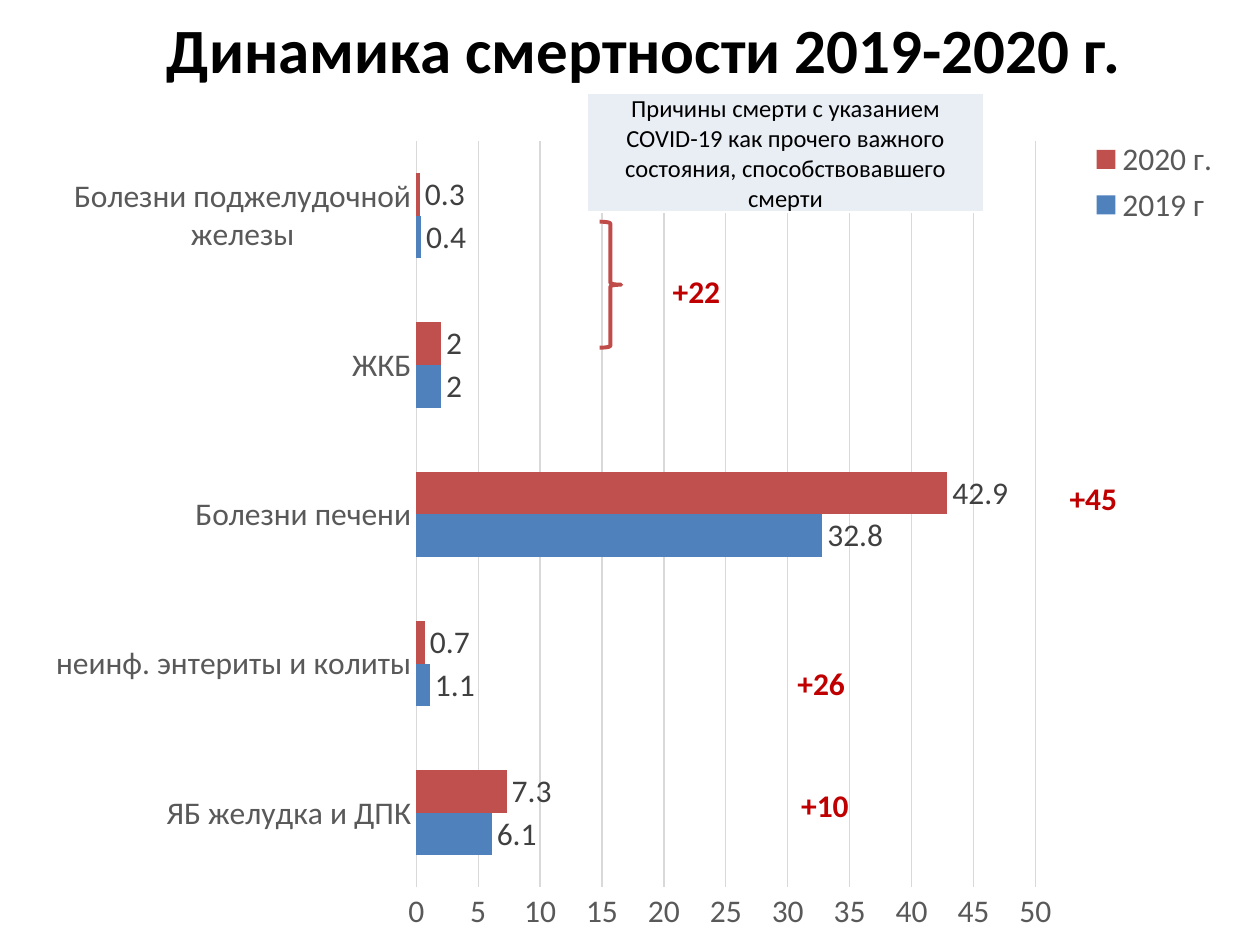
"""Build the mortality dynamics slide with a bar chart, a note and change marks."""
from dataclasses import dataclass

from lxml import etree
from pptx import Presentation
from pptx import util as u
from pptx.chart.data import CategoryChartData
from pptx.dml.color import RGBColor
from pptx.enum import chart as charts, shapes, text
from pptx.oxml import parse_xml
from pptx.oxml.ns import nsdecls, qn


@dataclass(frozen=True)
class Theme:
    font: str = "Calibri"
    title_size: int = 36
    body_size: int = 18
    note_size: int = 14
    ink: str = "000000"
    axis: str = "595959"
    label: str = "404040"
    grid: str = "D9D9D9"
    accent: str = "C00000"
    brace: str = "BF4C48"
    note_fill: str = "E9EDF4"
    border: str = "FFFFFF"
    series: tuple = ("4F81BD", "C0504D")


class SlideBuilder:
    COLUMNS, ROWS = 100, 75

    def __init__(self, deck, theme):
        self.theme = theme
        self.cell_width = deck.slide_width / self.COLUMNS
        self.cell_height = deck.slide_height / self.ROWS
        self.slide = deck.slides.add_slide(deck.slide_layouts[6])

    def place(self, left, top, width, height):
        return (u.Emu(round(left * self.cell_width)), u.Emu(round(top * self.cell_height)),
                u.Emu(round(width * self.cell_width)), u.Emu(round(height * self.cell_height)))

    def style(self, font, size, color, bold=False):
        font.name, font.size, font.bold = self.theme.font, u.Pt(size), bold
        font.color.rgb = RGBColor.from_string(color)

    def line(self, line, color, width):
        line.color.rgb = RGBColor.from_string(color)
        line.width = u.Pt(width)

    def add_words(self, frame, words, size, color, bold=False, align=text.PP_ALIGN.CENTER):
        para = frame.paragraphs[0]
        para.alignment = align
        span = para.add_run()
        span.text = words
        self.style(span.font, size, color, bold)

    def title(self, words, *area):
        frame = self.slide.shapes.add_textbox(*self.place(*area)).text_frame
        frame.word_wrap = True
        frame.vertical_anchor = text.MSO_ANCHOR.MIDDLE
        self.add_words(frame, words, self.theme.title_size, self.theme.ink, True)

    def change(self, words, left, top, width=6.4, wrap=False):
        frame = self.slide.shapes.add_textbox(*self.place(left, top, width, 4)).text_frame
        frame.word_wrap = wrap
        frame.auto_size = text.MSO_AUTO_SIZE.SHAPE_TO_FIT_TEXT
        self.add_words(frame, words, self.theme.body_size, self.theme.accent, True,
                       text.PP_ALIGN.LEFT)

    def note(self, words, *area):
        table = self.slide.shapes.add_table(1, 1, *self.place(*area)).table
        table.first_row = table.horz_banding = False
        cell = table.cell(0, 0)
        cell.margin_left = cell.margin_top = cell.margin_right = u.Inches(0.01)
        cell.margin_bottom = 0
        cell.vertical_anchor = text.MSO_ANCHOR.MIDDLE
        self.add_words(cell.text_frame, words, self.theme.note_size, self.theme.ink)
        cell.fill.solid()
        cell.fill.fore_color.rgb = RGBColor.from_string(self.theme.note_fill)
        properties = cell._tc.get_or_add_tcPr()
        for index, side in enumerate(("lnL", "lnR", "lnT", "lnB")):
            properties.insert(index, parse_xml(
                f'<a:{side} {nsdecls("a")} w="{u.Pt(1)}"><a:solidFill>'
                f'<a:srgbClr val="{self.theme.border}"/></a:solidFill></a:{side}>'))

    def brace(self, *area):
        shape = self.slide.shapes.add_shape(shapes.MSO_SHAPE.RIGHT_BRACE, *self.place(*area))
        shape.shadow.inherit = False
        shape.fill.background()
        self.line(shape.line, self.theme.brace, 2.25)

    def fix_layout(self, element, before, inner=False, **shares):
        for old in element.findall(qn("c:layout")):
            element.remove(old)
        layout = etree.Element(qn("c:layout"))
        manual = etree.SubElement(layout, qn("c:manualLayout"))
        values = {"layoutTarget": "inner"} if inner else {}
        values |= {"xMode": "edge", "yMode": "edge"} | shares
        for name, value in values.items():
            etree.SubElement(manual, qn(f"c:{name}")).set("val", str(value))
        element.find(qn(before)).addprevious(layout)

    def bar_chart(self, categories, series, *area):
        theme = self.theme
        data = CategoryChartData()
        data.categories = categories
        for name, values in series.items():
            data.add_series(name, values)
        chart = self.slide.shapes.add_chart(
            charts.XL_CHART_TYPE.BAR_CLUSTERED, *self.place(*area), data).chart
        chart.has_title = False
        self.style(chart.font, theme.body_size, theme.ink)
        for axis in (chart.category_axis, chart.value_axis):
            axis.major_tick_mark = axis.minor_tick_mark = charts.XL_TICK_MARK.NONE
            self.style(axis.tick_labels.font, theme.body_size, theme.axis)
        self.line(chart.category_axis.format.line, theme.grid, 0.75)
        scale = chart.value_axis
        scale.minimum_scale, scale.maximum_scale, scale.major_unit = 0, 50, 5
        scale.format.line.fill.background()
        self.line(scale.major_gridlines.format.line, theme.grid, 0.75)

        plot = chart.plots[0]
        plot.gap_width, plot.overlap, plot.vary_by_categories = 150, 0, False
        for bars, color in zip(plot.series, theme.series):
            bars.format.fill.solid()
            bars.format.fill.fore_color.rgb = RGBColor.from_string(color)
            labels = bars.data_labels
            labels.show_value = True
            labels.position = charts.XL_LABEL_POSITION.OUTSIDE_END
            self.style(labels.font, theme.body_size, theme.label)

        chart.has_legend = True
        legend = chart.legend
        legend.position = charts.XL_LEGEND_POSITION.RIGHT
        legend.include_in_layout = False
        self.style(legend.font, theme.body_size, theme.axis)
        self.fix_layout(legend._element, "c:overlay", x=0.88, y=0.01, w=0.12, h=0.12)
        self.fix_layout(chart._chartSpace.chart.plotArea, "c:barChart", True,
                        x=0.32, y=0.02, w=0.52, h=0.91)


def main():
    deck = Presentation()
    deck.slide_width, deck.slide_height = u.Inches(10), u.Inches(7.5)
    page = SlideBuilder(deck, Theme())
    page.bar_chart(
        ("ЯБ желудка и ДПК", "неинф. энтериты и колиты", "Болезни печени", "ЖКБ",
         "Болезни поджелудочной железы"),
        {"2019 г": (6.1, 1.1, 32.8, 2, 0.4), "2020 г.": (7.3, 0.7, 42.9, 2, 0.3)},
        2.8, 9.9, 94.5, 65.1)
    page.title("Динамика смертности 2019-2020 г.", 5, 0, 92.2, 7.6)
    page.note("Причины смерти с указанием COVID-19 как прочего важного состояния, "
              "способствовавшего смерти", 46.6, 7.4, 31.5, 7.1)
    for words, left, top in (("+10", 62.6, 61.9), ("+26", 62.3, 52.2), ("+45", 83.9, 37.5)):
        page.change(words, left, top)
    page.change("+22", 52.4, 21.1, width=10, wrap=True)
    page.brace(47.6, 17.6, 1.7, 10)
    deck.save("out.pptx")


if __name__ == "__main__":
    main()
